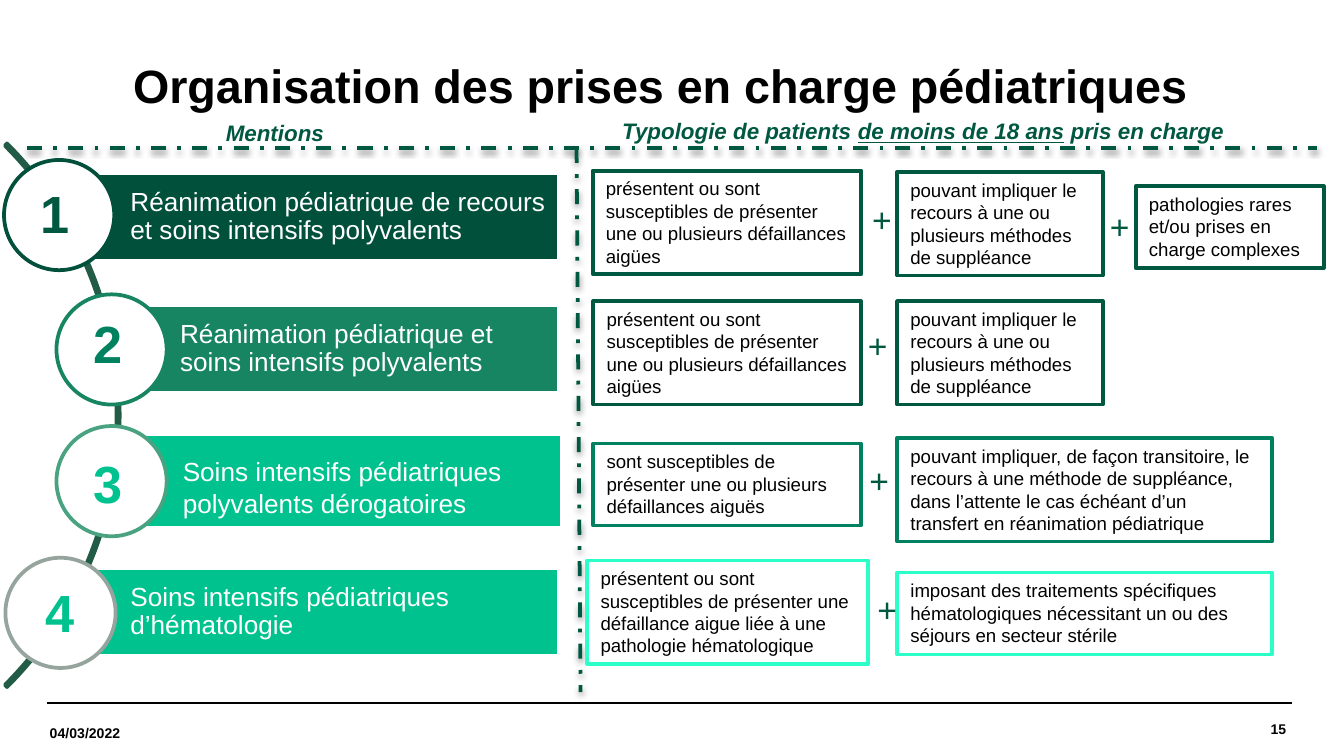
"""Build the slide on how paediatric critical care is organised."""
from lxml.etree import SubElement
from pptx import Presentation
from pptx.dml.color import RGBColor
from pptx.enum.dml import MSO_LINE
from pptx.enum.shapes import MSO_CONNECTOR, MSO_SHAPE
from pptx.enum.text import MSO_ANCHOR, PP_ALIGN
from pptx.oxml.ns import qn
from pptx.util import Inches, Pt

BLACK = RGBColor(0x00, 0x00, 0x00)
WHITE = RGBColor(0xFF, 0xFF, 0xFF)
ARC_GREEN = RGBColor(0x22, 0x5C, 0x47)
FOREST = RGBColor(0x00, 0x50, 0x3B)
PINE = RGBColor(0x00, 0x58, 0x41)
JADE = RGBColor(0x00, 0x82, 0x60)
FERN = RGBColor(0x18, 0x85, 0x62)
SAGE = RGBColor(0x49, 0xA3, 0x81)
MINT = RGBColor(0x00, 0xC2, 0x8F)
AQUA = RGBColor(0x2C, 0xFF, 0xC8)
GREY = RGBColor(0x95, 0xA4, 0x9D)

deck = Presentation()
deck.slide_width = Inches(10)
deck.slide_height = deck.slide_width * 9 // 16
slide = deck.slides.add_slide(deck.slide_layouts[6])
COL, ROW = deck.slide_width / 100, deck.slide_height / 56.25

TIGHT = dict.fromkeys(("margin_left", "margin_right", "margin_top", "margin_bottom"), 0)
BAND = dict.fromkeys(TIGHT, int(0.4 * COL)) | {"margin_left": int(5.2 * COL)}
HEADING = {"margin_left": int(1.2 * COL), "vertical_anchor": MSO_ANCHOR.MIDDLE}
TOP = {"vertical_anchor": MSO_ANCHOR.TOP}
MIDDLE = {"vertical_anchor": MSO_ANCHOR.MIDDLE}


def draw(preset, area, fill, line):
    """Add a preset shape, or a text box when preset is None, on the grid."""
    left, top, width, height = area
    place = [int(v) for v in (left * COL, top * ROW, width * COL, height * ROW)]
    if preset is None:
        return slide.shapes.add_textbox(*place)
    shape = slide.shapes.add_shape(preset, *place)
    shape.shadow.inherit = False
    if fill is None:
        shape.fill.background()
    else:
        shape.fill.solid()
        shape.fill.fore_color.rgb = fill
    shape.line.color.rgb = line
    shape.line.width = Pt(2)
    return shape


def write(shape, pieces, size, colour, frame, spacing=None, align=PP_ALIGN.LEFT, **style):
    """Fill a shape with (words, underlined) pieces in one paragraph."""
    for name, value in ({"word_wrap": True} | frame).items():
        setattr(shape.text_frame, name, value)
    paragraph = shape.text_frame.paragraphs[0]
    paragraph.alignment = align
    paragraph.line_spacing = spacing
    for words, underlined in pieces:
        run = paragraph.add_run()
        run.text = words
        run.font.color.rgb = colour
        font = {"name": "Arial", "size": Pt(size), "underline": underlined} | style
        for name, value in font.items():
            setattr(run.font, name, value)


arc = draw(MSO_SHAPE.BLOCK_ARC, (-48.3, 2.3, 57.2, 57.2), None, ARC_GREEN)
for index, value in enumerate((189, 27, 0.004)):
    arc.adjustments[index] = value

rules = [
    (3.5, 52.3, 95.7, 52.3, BLACK, 0.8, None),
    (3.9, 52.3, 96.1, 52.3, BLACK, 0.8, None),
    (2, 11, 98, 11, PINE, 2, MSO_LINE.DASH_DOT),
    (42.9, 11, 43.2, 51.5, PINE, 2, MSO_LINE.DASH_DOT),
]
for x1, y1, x2, y2, colour, weight, dash in rules:
    rule = slide.shapes.add_connector(
        MSO_CONNECTOR.STRAIGHT, int(x1 * COL), int(y1 * ROW), int(x2 * COL), int(y2 * ROW))
    rule.line.color.rgb = colour
    rule.line.width = Pt(weight)
    effects = SubElement(rule._element.spPr, qn("a:effectLst"))
    if dash:
        rule.line.dash_style = dash
        shadow = SubElement(effects, qn("a:outerShdw"), blurRad="40000", dist="20000",
                            dir="5400000", rotWithShape="0")
        tint = SubElement(shadow, qn("a:srgbClr"), val="000000")
        SubElement(tint, qn("a:alpha"), val="38000")

headings = [
    ((8.7, 3.6, 92.1, 5.9), 25, BLACK, False,
     [("Organisation des prises en charge pédiatriques", False)]),
    ((15.6, 7, 22.8, 5.9), 12, PINE, True, [("Mentions", False)]),
    ((45.1, 6.9, 51.4, 5.9), 12, PINE, True,
     [("Typologie de patients ", False), ("de moins de 18 ans", True),
      (" pris en charge", False)]),
]
for area, size, colour, italic, pieces in headings:
    write(draw(None, area, None, None), pieces, size, colour, HEADING, 0.9,
          bold=True, italic=italic)

mentions = [
    ((4.5, 12.9, 37.1, 6.5), FOREST, (0.3, 11.9), FOREST, (2, 13), PINE, 0.9, 0.4,
     "Réanimation pédiatrique de recours et soins intensifs polyvalents"),
    ((8.2, 22.7, 33.4, 6.5), FERN, (4.2, 21.9), FERN, (6, 22.7), JADE, 0.9, 0.4,
     "Réanimation pédiatrique et soins intensifs polyvalents"),
    ((8.4, 32.3, 33.4, 7), MINT, (4.2, 31.7), SAGE, (6, 33.1), MINT, 1, 1.3,
     "Soins intensifs pédiatriques polyvalents dérogatoires"),
    ((4.5, 42.3, 37.1, 6.5), MINT, (0.4, 41.5), GREY, (2.4, 42.7), MINT, 0.9, 0.4,
     "Soins intensifs pédiatriques d’hématologie"),
]
for order, (area, fill, disc_at, ring, digit_at, ink, spacing, pad, label) in enumerate(mentions):
    band = draw(MSO_SHAPE.RECTANGLE, area, fill, WHITE)
    write(band, [(label, False)], 14, WHITE,
          BAND | MIDDLE | {"margin_top": int(pad * ROW)}, spacing)
    draw(MSO_SHAPE.OVAL, (*disc_at, 8.2, 8.2), WHITE, ring)
    digit = draw(None, (*digit_at, 7, 5.7), None, None)
    write(digit, [(str(order + 1), False)], 28, ink, TOP, bold=True)

FAILURES = "présentent ou sont susceptibles de présenter une ou plusieurs défaillances aigües"
SUPPORT = "pouvant impliquer le recours à une ou plusieurs méthodes de suppléance"
criteria = [
    ((44.1, 12.7, 20, 7.7), PINE, FAILURES),
    ((66.75, 12.8, 15.3, 7.7), PINE, SUPPORT),
    ((84.5, 13.85, 14, 6.1), PINE, "pathologies rares et/ou prises en charge complexes"),
    ((44.15, 22.4, 19.9, 7.7), PINE, FAILURES),
    ((66.75, 22.4, 15.3, 7.7), PINE, SUPPORT),
    ((44.15, 33, 19.9, 6.1), JADE,
     "sont susceptibles de présenter une ou plusieurs défaillances aiguës"),
    ((66.75, 32.6, 27.9, 7.7), JADE,
     "pouvant impliquer, de façon transitoire, le recours à une méthode de suppléance, "
     "dans l’attente le cas échéant d’un transfert en réanimation pédiatrique"),
    ((43.7, 41.7, 20.9, 7.7), AQUA,
     "présentent ou sont susceptibles de présenter une défaillance aigue liée à une "
     "pathologie hématologique"),
    ((66.75, 42.6, 27.9, 6.1), AQUA,
     "imposant des traitements spécifiques hématologiques nécessitant un ou des séjours "
     "en secteur stérile"),
]
for area, outline, criterion in criteria:
    write(draw(MSO_SHAPE.RECTANGLE, area, WHITE, outline), [(criterion, False)], 10, BLACK, TOP)

for left, top in [(63.9, 14.3), (81.6, 14.8), (63.6, 23.7), (63.7, 33.7), (64.3, 43.3)]:
    write(draw(None, (left, top, 3.9, 4), None, None), [("+", False)], 18, PINE, TOP)

footers = [((3.7, 52.6, 12.8, 3.8), "04/03/2022", PP_ALIGN.LEFT),
           ((80.9, 52.3, 14.8, 3.9), "15", PP_ALIGN.RIGHT)]
for area, words, align in footers:
    write(draw(None, area, None, None), [(words, False)], 7.5, BLACK, TIGHT | MIDDLE,
          align=align, bold=True)

deck.save("out.pptx")
